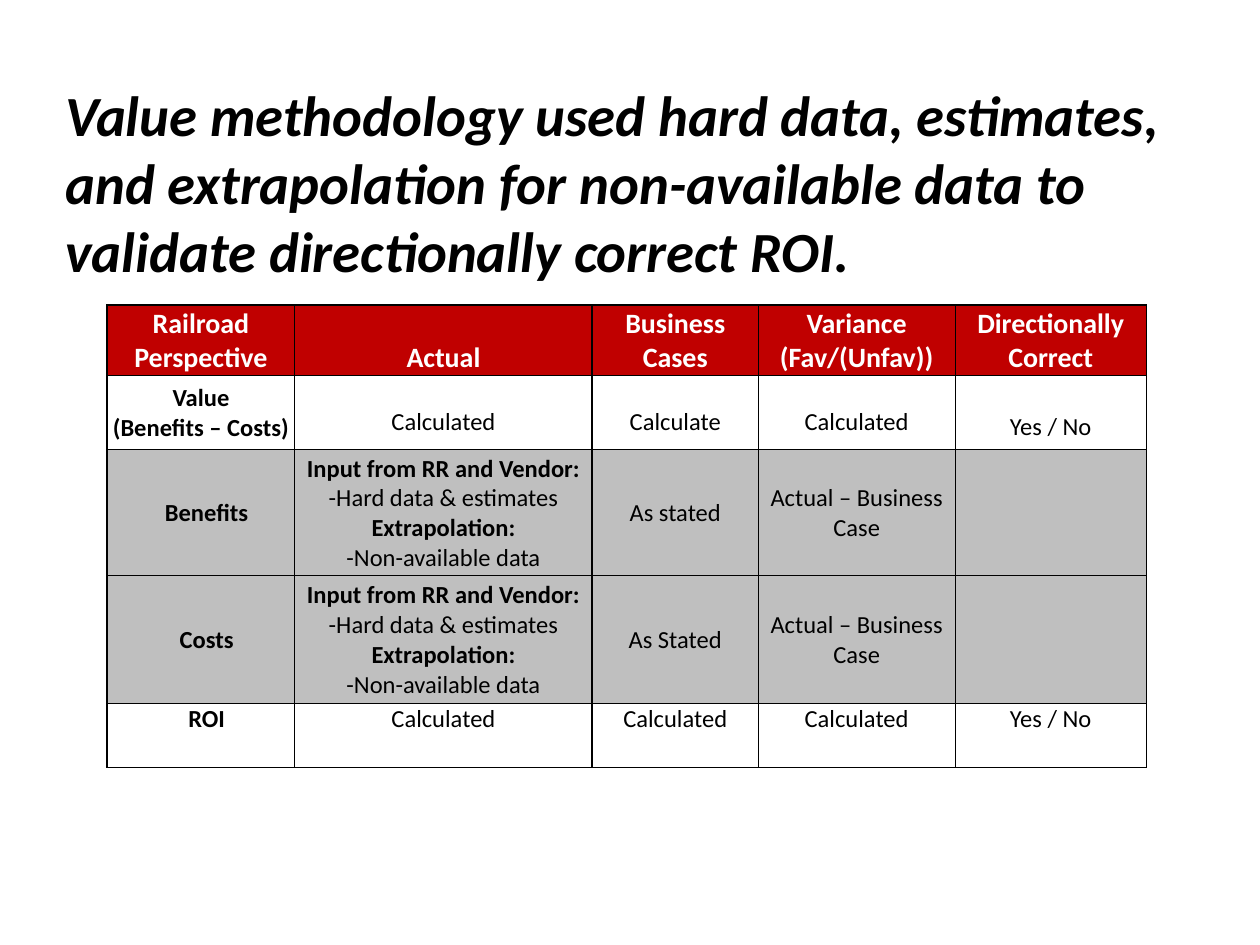
import dataclasses

import lxml.etree
import pptx
import pptx.dml.color
import pptx.enum.text
import pptx.oxml.ns
import pptx.util

Inches = pptx.util.Inches
Anchor = pptx.enum.text.MSO_ANCHOR
Align = pptx.enum.text.PP_ALIGN


@dataclasses.dataclass(frozen=True)
class Theme:
    font: str = "Calibri"
    black: str = "000000"
    white: str = "FFFFFF"
    red: str = "C00000"
    grey: str = "BFBFBF"
    title_size: float = 32.4
    header_size: float = 16
    body_size: float = 14
    thin: float = 0.5
    thick: float = 1


THEME = Theme()

TITLE = ("Value methodology used hard data, estimates, and extrapolation for "
         "non-available data to validate directionally correct ROI.")
INPUTS = ("Input from RR and Vendor:\n-Hard data & estimates\n"
          "Extrapolation:\n-Non-available data")
VARIANCE = "Actual – Business Case"
ROWS = [
    ["Railroad Perspective", "Actual", "Business Cases",
     "Variance (Fav/(Unfav))", "Directionally Correct"],
    ["Value\n(Benefits – Costs)", "Calculated", "Calculate", "Calculated", "Yes / No"],
    ["Benefits", INPUTS, "As stated", VARIANCE, ""],
    ["Costs", INPUTS, "As Stated", VARIANCE, ""],
    ["ROI", "Calculated", "Calculated", "Calculated", "Yes / No"],
]
COLUMN_WIDTHS = [1.49, 2.36, 1.32, 1.56, 1.52]
ROW_HEIGHTS = [0.56, 0.59, 1, 1.01, 0.51]
HEADER, VALUE, BENEFITS, COSTS, ROI = range(5)

# Grid lines, counted from the left and from the top, that are drawn thick
THICK_COLUMNS = {0, 2, 3, 5}
THICK_ROWS = {0, 1, 5}


def format_span(span, size, color, bold, italic=False):
    span.font.name = THEME.font
    span.font.size = pptx.util.Pt(size)
    span.font.color.rgb = pptx.dml.color.RGBColor.from_string(color)
    span.font.bold = bold
    span.font.italic = italic


def add_title(page):
    box = page.shapes.add_textbox(Inches(0.42), Inches(0.8), Inches(9.58), Inches(1.28))
    frame = box.text_frame
    frame.word_wrap = True
    frame.vertical_anchor = Anchor.MIDDLE
    frame.margin_right = Inches(0.05)
    frame.text = TITLE
    format_span(frame.paragraphs[0].runs[0], THEME.title_size, THEME.black, True, True)


def add_border(cell, side, thick):
    width = pptx.util.Pt(THEME.thick if thick else THEME.thin)
    qn = pptx.oxml.ns.qn
    line = lxml.etree.SubElement(cell._tc.get_or_add_tcPr(), qn(f"a:{side}"), w=str(width))
    fill = lxml.etree.SubElement(line, qn("a:solidFill"))
    lxml.etree.SubElement(fill, qn("a:srgbClr"), val=THEME.black)


def style_cell(cell, row, column):
    # Borders come before the fill in the cell properties
    add_border(cell, "lnL", column in THICK_COLUMNS)
    add_border(cell, "lnR", column + 1 in THICK_COLUMNS)
    add_border(cell, "lnT", row in THICK_ROWS)
    add_border(cell, "lnB", row + 1 in THICK_ROWS)
    fills = {HEADER: THEME.red, BENEFITS: THEME.grey, COSTS: THEME.grey}
    cell.fill.solid()
    cell.fill.fore_color.rgb = pptx.dml.color.RGBColor.from_string(
        fills.get(row, THEME.white))

    # Placement of the text
    cell.margin_left = cell.margin_right = cell.margin_top = Inches(0.01)
    cell.margin_bottom = 0
    if row == HEADER:
        cell.vertical_anchor = Anchor.BOTTOM
    elif row in (BENEFITS, COSTS) or (row == VALUE and column == 0):
        cell.vertical_anchor = Anchor.MIDDLE
    else:
        cell.vertical_anchor = Anchor.TOP
    if row == VALUE and column > 0:
        cell.margin_top = Inches(0.29 if column == 4 else 0.25)
    if row > VALUE and column == 0:
        cell.margin_left = Inches(0.1)


def fill_cell(cell, text, row, column):
    header = row == HEADER
    size = THEME.header_size if header else THEME.body_size
    color = THEME.white if header else THEME.black
    cell.text_frame.text = text
    for para in cell.text_frame.paragraphs:
        para.alignment = Align.CENTER
        for span in para.runs:
            bold = header or column == 0 or span.text.endswith(":")
            format_span(span, size, color, bold)


def add_value_table(page):
    frame = page.shapes.add_table(
        len(ROWS), len(COLUMN_WIDTHS), Inches(0.85), Inches(2.42),
        Inches(sum(COLUMN_WIDTHS)), Inches(sum(ROW_HEIGHTS)))
    table = frame.table
    table.horz_banding = False
    for column, width in zip(table.columns, COLUMN_WIDTHS):
        column.width = Inches(width)
    for row, height in zip(table.rows, ROW_HEIGHTS):
        row.height = Inches(height)
    for row, texts in enumerate(ROWS):
        for column, text in enumerate(texts):
            cell = table.cell(row, column)
            style_cell(cell, row, column)
            fill_cell(cell, text, row, column)


def main():
    deck = pptx.Presentation()
    deck.slide_width = Inches(10)
    deck.slide_height = Inches(7.5)
    page = deck.slides.add_slide(deck.slide_layouts[6])
    add_title(page)
    add_value_table(page)
    deck.save("out.pptx")


if __name__ == "__main__":
    main()
